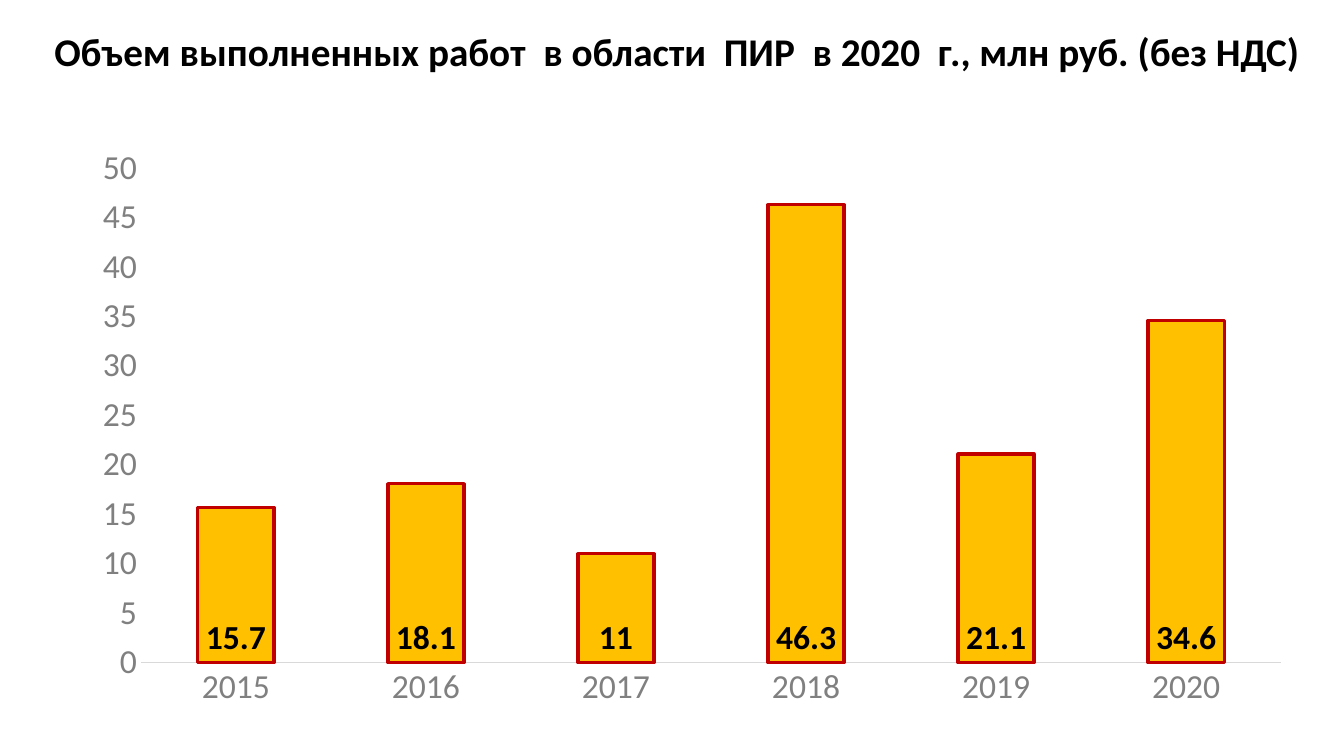
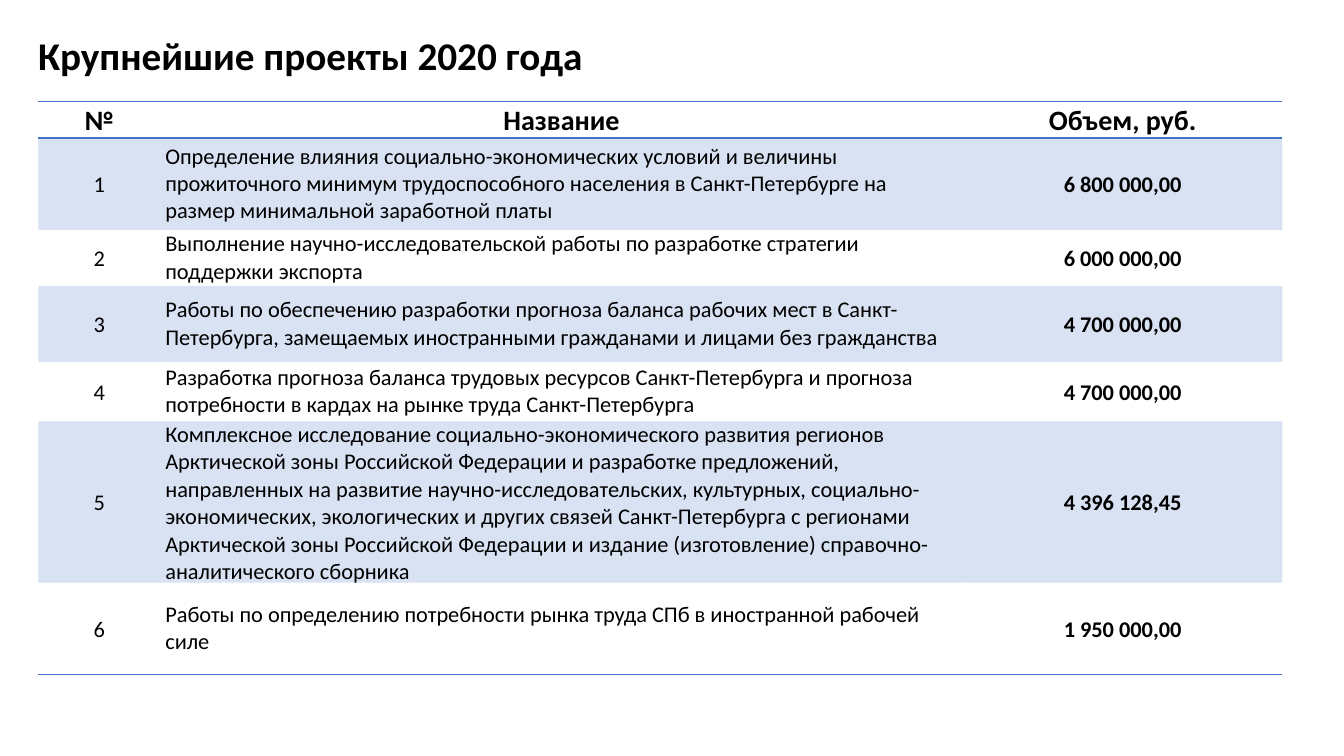
from dataclasses import dataclass

from lxml.etree import SubElement
from pptx import Presentation
from pptx.chart.data import CategoryChartData
from pptx.dml.color import RGBColor
from pptx.enum.chart import XL_CHART_TYPE as ChartType
from pptx.enum.chart import XL_LABEL_POSITION as LabelPosition
from pptx.enum.chart import XL_TICK_MARK as TickMark
from pptx.enum.text import MSO_ANCHOR as Anchor
from pptx.enum.text import MSO_AUTO_SIZE as AutoSize
from pptx.enum.text import PP_ALIGN as Align
from pptx.oxml import parse_xml
from pptx.oxml.ns import nsdecls, qn
from pptx.util import Inches, Pt


@dataclass(frozen=True)
class Theme:
    font: str = "Calibri"
    text: str = "000000"
    axis_text: str = "808080"
    axis_line: str = "D9D9D9"
    bar: str = "FFC000"
    bar_line: str = "C00000"
    accent: str = "4472C4"
    band_opacity: int = 20
    title_size: int = 28
    chart_size: int = 24
    header_size: int = 20
    body_size: int = 16


THEME = Theme()
PLAIN_TABLE_STYLE = "{2D5ABB26-0587-4C30-8999-92F81FD0307C}"

YEARS = ["2015", "2016", "2017", "2018", "2019", "2020"]
VOLUMES = [15.7, 18.1, 11, 46.3, 21.1, 34.6]

HEADINGS = ("№", "Название", "Объем, руб.")
PROJECTS = [
    ("Определение влияния социально-экономических условий и величины прожиточного "
     "минимум трудоспособного населения в Санкт-Петербурге на размер минимальной "
     "заработной платы", "6 800 000,00"),
    ("Выполнение научно-исследовательской работы по разработке стратегии "
     "поддержки экспорта", "6 000 000,00"),
    ("Работы по обеспечению разработки прогноза баланса рабочих мест в "
     "Санкт-Петербурга, замещаемых иностранными гражданами и лицами без "
     "гражданства", "4 700 000,00"),
    ("Разработка прогноза баланса трудовых ресурсов Санкт-Петербурга и прогноза "
     "потребности в кардах на рынке труда Санкт-Петербурга", "4 700 000,00"),
    ("Комплексное исследование социально-экономического развития регионов "
     "Арктической зоны Российской Федерации и разработке предложений, направленных "
     "на развитие научно-исследовательских, культурных, социально-экономических, "
     "экологических и других связей Санкт-Петербурга с регионами Арктической зоны "
     "Российской Федерации и издание (изготовление) справочно-аналитического "
     "сборника", "4 396 128,45"),
    ("Работы по определению потребности рынка труда СПб в иностранной рабочей "
     "силе", "1 950 000,00"),
]
COLUMN_WIDTHS = (1.21, 7.96, 3.17)
ROW_HEIGHTS = (0.36, 0.91, 0.56, 0.75, 0.59, 1.6, 0.91)


def style_font(font, size, color=THEME.text, bold=False):
    font.name = THEME.font
    font.size = Pt(size)
    font.bold = bold
    font.color.rgb = RGBColor.from_string(color)


def style_line(line, color, width):
    line.color.rgb = RGBColor.from_string(color)
    line.width = Pt(width)


def add_run(paragraph, text, size, bold):
    run = paragraph.add_run()
    run.text = text
    style_font(run.font, size, bold=bold)


def add_title(slide, box, text, wrap):
    shape = slide.shapes.add_textbox(*map(Inches, box))
    frame = shape.text_frame
    frame.word_wrap = wrap
    frame.auto_size = AutoSize.SHAPE_TO_FIT_TEXT
    add_run(frame.paragraphs[0], text, THEME.title_size, True)


def set_plot_area(chart, x, y, width, height):
    plot_area = chart._chartSpace.chart.plotArea
    for layout in plot_area.findall(qn("c:layout")):
        plot_area.remove(layout)
    plot_area.insert(0, parse_xml(
        f'<c:layout {nsdecls("c")}><c:manualLayout><c:layoutTarget val="inner"/>'
        f'<c:xMode val="edge"/><c:yMode val="edge"/><c:x val="{x}"/><c:y val="{y}"/>'
        f'<c:w val="{width}"/><c:h val="{height}"/></c:manualLayout></c:layout>'))


def add_volume_chart(slide, box):
    data = CategoryChartData()
    data.categories = YEARS
    data.add_series("Series 1", VOLUMES)
    chart = slide.shapes.add_chart(
        ChartType.COLUMN_STACKED, *map(Inches, box), data).chart
    chart.has_legend = False
    chart.has_title = False
    style_font(chart.font, THEME.chart_size)
    set_plot_area(chart, 0.058, 0.049, 0.927, 0.833)

    for axis in (chart.category_axis, chart.value_axis):
        axis.has_major_gridlines = False
        axis.major_tick_mark = axis.minor_tick_mark = TickMark.NONE
        style_font(axis.tick_labels.font, THEME.chart_size, THEME.axis_text)
    style_line(chart.category_axis.format.line, THEME.axis_line, 0.75)
    values = chart.value_axis
    values.format.line.fill.background()
    values.minimum_scale, values.maximum_scale, values.major_unit = 0, 50, 5

    plot = chart.plots[0]
    plot.gap_width, plot.overlap = 150, 100
    plot.vary_by_categories = False
    series = plot.series[0]
    series.format.fill.solid()
    series.format.fill.fore_color.rgb = RGBColor.from_string(THEME.bar)
    style_line(series.format.line, THEME.bar_line, 2.25)
    labels = series.data_labels
    labels.show_value = True
    labels.position = LabelPosition.INSIDE_BASE
    style_font(labels.font, THEME.chart_size, bold=True)


def fill_cell(cell, banded):
    if not banded:
        cell.fill.background()
        return
    cell.fill.solid()
    cell.fill.fore_color.rgb = RGBColor.from_string(THEME.accent)
    color = cell._tc.tcPr.find(f'{qn("a:solidFill")}/{qn("a:srgbClr")}')
    SubElement(color, qn("a:alpha")).set("val", str(THEME.band_opacity * 1000))


def add_borders(cell, sides):
    for index, side in enumerate(sides):
        cell._tc.tcPr.insert(index, parse_xml(
            f'<a:ln{side} {nsdecls("a")} w="{Pt(1)}"><a:solidFill>'
            f'<a:srgbClr val="{THEME.accent}"/></a:solidFill></a:ln{side}>'))


def write_cell(cell, text, size, bold, centred):
    cell.vertical_anchor = Anchor.MIDDLE
    cell.margin_left = cell.margin_right = Inches(0.05)
    cell.margin_top = cell.margin_bottom = 0
    paragraph = cell.text_frame.paragraphs[0]
    paragraph.space_before = paragraph.space_after = Pt(6)
    paragraph.alignment = Align.CENTER if centred else Align.LEFT
    if centred:
        paragraph.line_spacing = 1.07
    add_run(paragraph, text, size, bold)


def add_project_table(slide, left, top):
    rows = [HEADINGS] + [
        (str(number), *project) for number, project in enumerate(PROJECTS, 1)]
    table = slide.shapes.add_table(
        len(rows), len(HEADINGS), Inches(left), Inches(top),
        Inches(sum(COLUMN_WIDTHS)), Inches(sum(ROW_HEIGHTS))).table
    table.first_row = table.horz_banding = False
    table._tbl.tblPr.find(qn("a:tableStyleId")).text = PLAIN_TABLE_STYLE
    for column, width in zip(table.columns, COLUMN_WIDTHS):
        column.width = Inches(width)
    for row, height in zip(table.rows, ROW_HEIGHTS):
        row.height = Inches(height)

    last = len(rows) - 1
    borders = {0: "TB", last: "B"}
    for row_index, texts in enumerate(rows):
        header = row_index == 0
        size = THEME.header_size if header else THEME.body_size
        for column_index, text in enumerate(texts):
            cell = table.cell(row_index, column_index)
            write_cell(cell, text, size, header or column_index == 2,
                       header or column_index != 1)
            fill_cell(cell, row_index % 2 == 1)
            add_borders(cell, borders.get(row_index, ""))


def build_volume_slide(slide):
    add_volume_chart(slide, (0.69, 1.38, 12.2, 5.89))
    add_title(slide, (0.44, 0.22, 12.67, 0.57),
              "Объем выполненных работ  в области  ПИР  в 2020  г., "
              "млн руб. (без НДС)", True)


def build_projects_slide(slide):
    add_title(slide, (0.28, 0.26, 5.65, 0.57), "Крупнейшие проекты 2020 года", False)
    add_project_table(slide, 0.38, 1.01)


def main():
    presentation = Presentation()
    presentation.slide_width = Inches(13.33)
    presentation.slide_height = Inches(7.5)
    blank = presentation.slide_layouts[6]
    for build in (build_volume_slide, build_projects_slide):
        build(presentation.slides.add_slide(blank))
    presentation.save("out.pptx")


if __name__ == "__main__":
    main()
